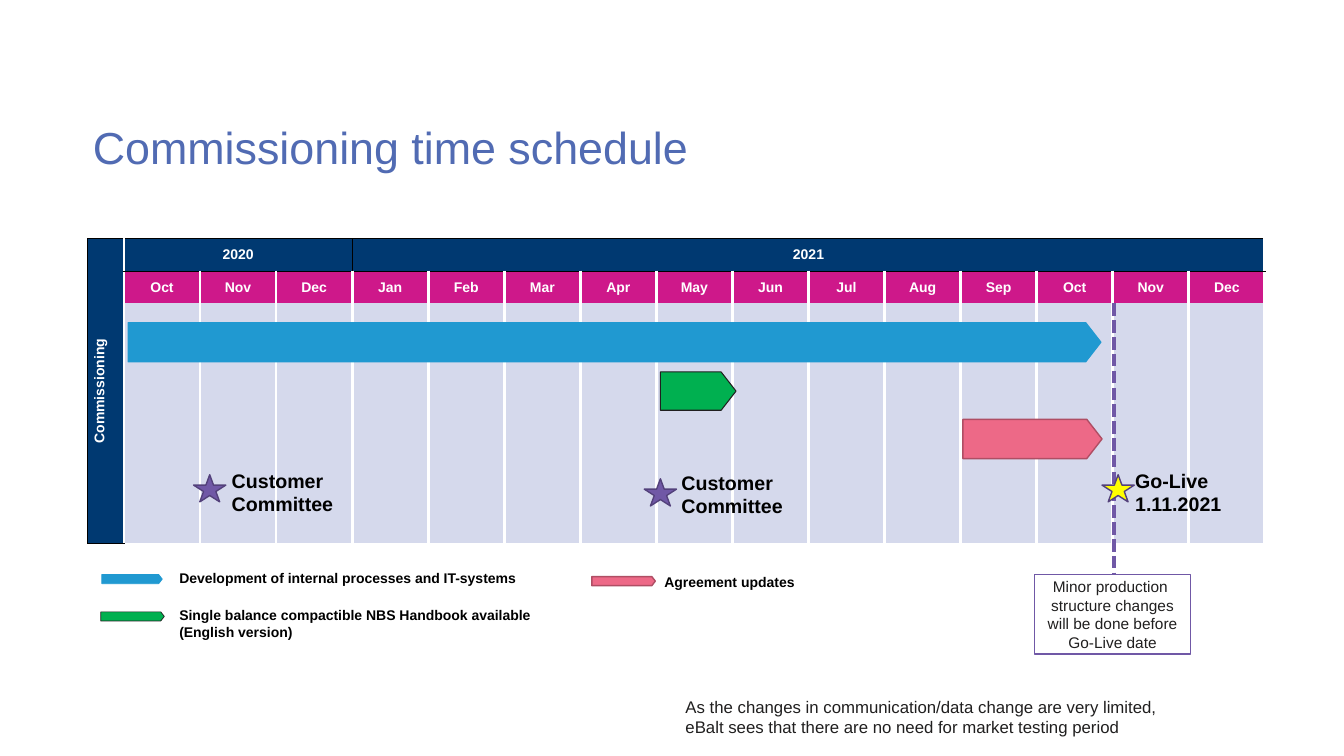
from dataclasses import dataclass
from typing import NamedTuple, Optional

from lxml import etree
from pptx import Presentation, util as u
from pptx.dml.color import RGBColor
from pptx.enum import dml, shapes, text
from pptx.oxml import ns


@dataclass(frozen=True)
class Theme:
    font: str = "Arial"
    title: str = "516BB3"
    navy: str = "003971"
    magenta: str = "CE188A"
    lavender: str = "D5D9EC"
    white: str = "FFFFFF"
    black: str = "000000"
    ink: str = "201F1F"
    blue: str = "2099D1"
    green: str = "00B050"
    pink: str = "ED6987"
    pink_edge: str = "AF4E64"
    purple: str = "7058A6"
    purple_edge: str = "53417B"
    yellow: str = "FFFF00"
    title_size: float = 32
    milestone_size: float = 14
    note_size: float = 12
    callout_size: float = 11
    label_size: float = 10


class Box(NamedTuple):
    left: float
    top: float
    width: float
    height: float


class Edge(NamedTuple):
    color: str
    points: float


class Edges(NamedTuple):
    left: Optional[Edge] = None
    right: Optional[Edge] = None
    top: Optional[Edge] = None
    bottom: Optional[Edge] = None


class Activity(NamedTuple):
    fill: str
    edge: str
    bar: Box
    bar_line: float
    key: Box
    key_line: float
    label: Box
    lines: list[str]


class Milestone(NamedTuple):
    star: Box
    fill: str
    label: Box
    lines: list[str]


THEME = Theme()
MONTHS = "Oct Nov Dec Jan Feb Mar Apr May Jun Jul Aug Sep Oct Nov Dec".split()
MONTHS_2020 = 3
STUB_WIDTH, SCHEDULE = 0.36, Box(0.87, 2.37, 11.68, 3.02)
ROW_HEIGHTS = [0.32, 0.32, 2.38]
GO_LIVE_X = 11.05

ACTIVITIES = [
    Activity(THEME.blue, THEME.blue, Box(1.27, 3.2, 9.65, 0.39), 0.75,
             Box(1.01, 5.7, 0.6, 0.09), 0.5, Box(1.68, 5.6, 4.36, 0.44),
             ["Development of internal processes and IT-systems"]),
    Activity(THEME.green, THEME.ink, Box(6.55, 3.69, 0.75, 0.38), 0.75,
             Box(1, 6.07, 0.63, 0.09), 0.5, Box(1.68, 5.97, 4.73, 0.44),
             ["Single balance compactible NBS Handbook available", "(English version)"]),
    Activity(THEME.pink, THEME.pink_edge, Box(9.55, 4.16, 1.38, 0.39), 1,
             Box(5.87, 5.72, 0.63, 0.09), 1, Box(6.49, 5.64, 4.73, 0.27),
             ["Agreement updates"]),
]
MILESTONES = [
    Milestone(Box(1.92, 4.71, 0.32, 0.27), THEME.purple,
              Box(2.2, 4.6, 1.54, 0.57), ["Customer Committee"]),
    Milestone(Box(6.39, 4.75, 0.32, 0.27), THEME.purple,
              Box(6.66, 4.62, 1.54, 0.57), ["Customer Committee"]),
    Milestone(Box(10.93, 4.71, 0.32, 0.27), THEME.yellow,
              Box(11.16, 4.6, 1.09, 0.57), ["Go-Live ", "1.11.2021"]),
]


def rgb(color: str) -> RGBColor:
    return RGBColor.from_string(color)


def inches(box: Box) -> list[u.Length]:
    return [u.Inches(value) for value in box]


def write(frame, lines: list[str], size: float, color: str, bold: bool = False, centred: bool = False) -> None:
    paragraph = frame.paragraphs[0]
    if centred:
        paragraph.alignment = text.PP_ALIGN.CENTER
    for number, line in enumerate(lines):
        if number:
            paragraph.add_line_break()
        run = paragraph.add_run()
        run.text = line
        run.font.name, run.font.size, run.font.bold = THEME.font, u.Pt(size), bold
        run.font.color.rgb = rgb(color)


def add_label(parent, box: Box, lines: list[str], size: float, color: str, bold: bool = True) -> None:
    frame = parent.add_textbox(*inches(box)).text_frame
    frame.word_wrap = True
    write(frame, lines, size, color, bold)


def add_figure(parent, kind: shapes.MSO_SHAPE, box: Box, fill: str, edge: Edge):
    figure = parent.add_shape(kind, *inches(box))
    figure.shadow.inherit = False
    figure.fill.solid()
    figure.fill.fore_color.rgb = rgb(fill)
    figure.line.color.rgb = rgb(edge.color)
    figure.line.width = u.Pt(edge.points)
    return figure


def add_arrow(parent, box: Box, fill: str, edge: Edge) -> None:
    add_figure(parent, shapes.MSO_SHAPE.PENTAGON, box, fill, edge).adjustments[0] = 0.388


def format_cell(cell, fill: str, edges: Edges) -> None:
    properties = cell._tc.get_or_add_tcPr()
    for tag, edge in zip(("a:lnL", "a:lnR", "a:lnT", "a:lnB"), edges):
        line = etree.SubElement(properties, ns.qn(tag))
        if edge:
            line.set("w", str(u.Pt(edge.points)))
            paint = etree.SubElement(line, ns.qn("a:solidFill"))
            etree.SubElement(paint, ns.qn("a:srgbClr")).set("val", edge.color)
        else:
            etree.SubElement(line, ns.qn("a:noFill"))
    cell.fill.solid()
    cell.fill.fore_color.rgb = rgb(fill)
    cell.vertical_anchor = text.MSO_ANCHOR.MIDDLE
    cell.margin_left = cell.margin_right = cell.margin_top = cell.margin_bottom = u.Inches(0.04)


def add_heading(table, row: int, column: int, rows: int, columns: int, name: str, fill: str, edges: Edges):
    for r in range(row, row + rows):
        for c in range(column, column + columns):
            format_cell(table.cell(r, c), fill, edges)
    heading = table.cell(row, column)
    if rows * columns > 1:
        heading.merge(table.cell(row + rows - 1, column + columns - 1))
    write(heading.text_frame, [name], THEME.label_size, THEME.white, True, True)
    return heading


def add_schedule(parent) -> None:
    count = len(MONTHS)
    table = parent.add_table(len(ROW_HEIGHTS), count + 1, *inches(SCHEDULE)).table
    table.first_row = table.horz_banding = False
    for row, height in zip(table.rows, ROW_HEIGHTS):
        row.height = u.Inches(height)
    for number, column in enumerate(table.columns):
        column.width = u.Inches((SCHEDULE.width - STUB_WIDTH) / count if number else STUB_WIDTH)
    white, black = Edge(THEME.white, 2.25), Edge(THEME.black, 1)
    stub = add_heading(table, 0, 0, 3, 1, "Commissioning", THEME.navy, Edges(black, white, black, black))
    stub._tc.get_or_add_tcPr().set("vert", "vert270")
    add_heading(table, 0, 1, 1, MONTHS_2020, "2020", THEME.navy, Edges(white, black, black, black))
    add_heading(table, 0, 1 + MONTHS_2020, 1, count - MONTHS_2020, "2021", THEME.navy,
                Edges(black, white, black, black))
    for column, month in enumerate(MONTHS, 1):
        add_heading(table, 1, column, 1, 1, month, THEME.magenta, Edges(white, white, black))
        format_cell(table.cell(2, column), THEME.lavender, Edges(white, white))


def add_go_live_line(parent) -> None:
    line = parent.add_connector(shapes.MSO_CONNECTOR.STRAIGHT, u.Inches(GO_LIVE_X), u.Inches(3.01),
                                u.Inches(GO_LIVE_X), u.Inches(5.69))
    line.line.color.rgb = rgb(THEME.purple)
    line.line.width = u.Pt(3)
    line.line.dash_style = dml.MSO_LINE.SQUARE_DOT
    etree.SubElement(line._element.spPr, ns.qn("a:effectLst"))


def main() -> None:
    deck = Presentation()
    deck.slide_width, deck.slide_height = u.Inches(13.33), u.Inches(7.5)
    slide = deck.slides.add_slide(deck.slide_layouts[5])
    canvas = slide.shapes

    title = canvas.title
    title.left, title.top, title.width, title.height = inches(Box(0.82, 0.76, 11.73, 1.45))
    title.text_frame.vertical_anchor = text.MSO_ANCHOR.MIDDLE
    write(title.text_frame, ["Commissioning time schedule"], THEME.title_size, THEME.title)
    title.text_frame.paragraphs[0].alignment = text.PP_ALIGN.LEFT
    title.text_frame.paragraphs[0].line_spacing = 0.9

    add_schedule(canvas)
    for activity in ACTIVITIES:
        add_arrow(canvas, activity.bar, activity.fill, Edge(activity.edge, activity.bar_line))
        legend = canvas.add_group_shape().shapes
        add_arrow(legend, activity.key, activity.fill, Edge(activity.edge, activity.key_line))
        add_label(legend, activity.label, activity.lines, THEME.label_size, THEME.black)

    add_go_live_line(canvas)
    callout = add_figure(canvas, shapes.MSO_SHAPE.RECTANGLE, Box(10.26, 5.7, 1.55, 0.79),
                         THEME.white, Edge(THEME.purple, 1)).text_frame
    callout.word_wrap = True
    callout.vertical_anchor = text.MSO_ANCHOR.MIDDLE
    write(callout, ["Minor production ", "structure changes will be done before Go-Live date"],
          THEME.callout_size, THEME.ink, centred=True)
    add_label(canvas, Box(6.7, 6.86, 5.88, 0.51),
              ["As the changes in communication/data change are very limited, ",
               "eBalt sees that there are no need for market testing period"],
              THEME.note_size, THEME.ink, False)
    for milestone in MILESTONES:
        add_label(canvas, milestone.label, milestone.lines, THEME.milestone_size, THEME.black)
        add_figure(canvas, shapes.MSO_SHAPE.STAR_5_POINT, milestone.star, milestone.fill,
                   Edge(THEME.purple_edge, 1))
    deck.save("out.pptx")


if __name__ == "__main__":
    main()
